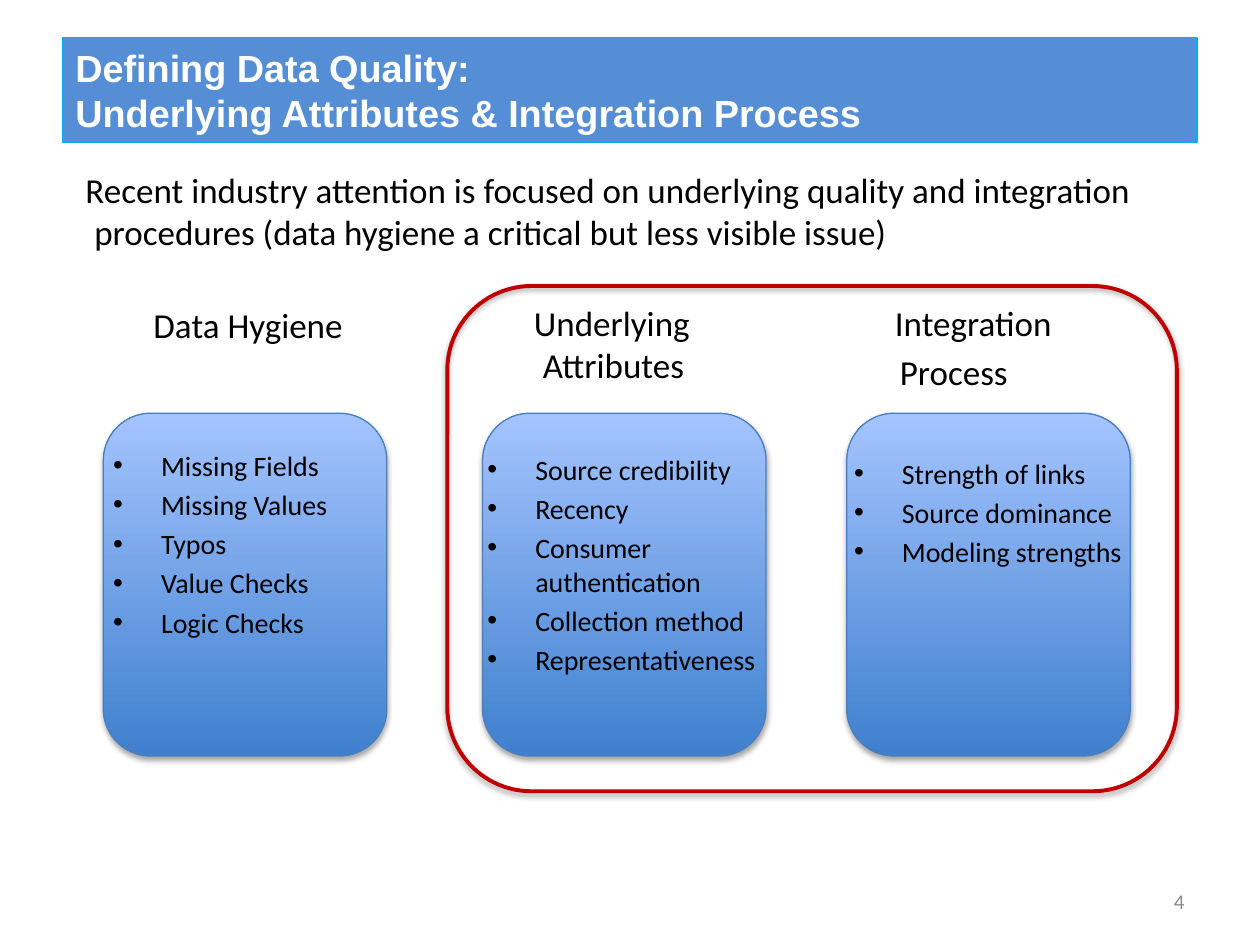
from lxml.etree import SubElement
from pptx import Presentation
from pptx.dml.color import RGBColor
from pptx.enum.shapes import MSO_SHAPE
from pptx.enum.text import MSO_ANCHOR, PP_ALIGN
from pptx.oxml.ns import qn
from pptx.util import Inches, Pt

COLORS = {
    "title_fill": "558ED5", "title_line": "00B0F0", "title_text": "FFFFFF",
    "text": "000000", "number": "8C8C8C", "shadow": "000000",
    "card_bottom": "3F80CE", "card_top": "A4C4FF", "card_line": "4B7EBC",
    "frame": "C00000",
}
TITLE = ["Defining Data Quality:", "Underlying Attributes & Integration Process"]
INTRO = ("Recent industry attention is focused on underlying quality and integration "
         "procedures (data hygiene a critical but less visible issue)")
COLUMNS = [
    {"heading": ["Data Hygiene"], "heading_at": (0.81, 2.36),
     "align": PP_ALIGN.LEFT, "card_left": 0.82, "list_at": (0.8, 3.51, 2.32),
     "items": ["Missing Fields", "Missing Values", "Typos", "Value Checks", "Logic Checks"]},
    {"heading": ["Underlying Attributes"], "heading_at": (3.83, 2.34),
     "align": PP_ALIGN.LEFT, "card_left": 3.83, "list_at": (3.77, 3.54, 2.48),
     "items": ["Source credibility", "Recency", "Consumer authentication",
               "Collection method", "Representativeness"]},
    {"heading": ["Integration", "Process"], "heading_at": (6.52, 2.34),
     "align": PP_ALIGN.CENTER, "card_left": 6.72, "list_at": (6.68, 3.57, 2.48),
     "items": ["Strength of links", "Source dominance", "Modeling strengths"]},
]
HANGING = 0.38
FIRST_LINE = -0.07


def color(name):
    return RGBColor.from_string(COLORS[name])


def style_font(font, **values):
    values = {"name": "Calibri", "size": Pt(20), **values}
    font.color.rgb = color(values.pop("color", "text"))
    for attribute, value in values.items():
        setattr(font, attribute, value)


def add_text(slide, box, lines, size=20, align=PP_ALIGN.LEFT, bullet=False):
    frame = slide.shapes.add_textbox(*map(Inches, box)).text_frame
    frame.word_wrap = True
    for index, line in enumerate(lines):
        paragraph = frame.paragraphs[0] if index == 0 else frame.add_paragraph()
        paragraph.text = line
        paragraph.alignment = align
        if index:
            paragraph.space_before = Pt(size * 0.2)
        indent = FIRST_LINE if index == 0 and not bullet else -HANGING
        properties = paragraph._p.get_or_add_pPr()
        properties.set("marL", str(Inches(HANGING)))
        properties.set("indent", str(Inches(indent)))
        if bullet:
            SubElement(properties, qn("a:buFont"), typeface="Arial")
            SubElement(properties, qn("a:buChar"), char="•")
        style_font(paragraph.font, size=Pt(size))


def add_outlined(slide, kind, box, line, width):
    shape = slide.shapes.add_shape(kind, *map(Inches, box))
    shape.shadow.inherit = False
    shape.line.color.rgb = color(line)
    shape.line.width = Pt(width)
    return shape


def add_shadow(shape):
    effects = shape._element.spPr.find(qn("a:effectLst"))
    shadow = SubElement(effects, qn("a:outerShdw"), blurRad=str(Pt(3.1)),
                        dist=str(Pt(1.8)), dir="5400000", rotWithShape="0")
    tint = SubElement(shadow, qn("a:srgbClr"), val=COLORS["shadow"])
    SubElement(tint, qn("a:alpha"), val="35000")


def add_title(slide):
    shape = add_outlined(slide, MSO_SHAPE.RECTANGLE, (0.5, 0.3, 9, 0.83), "title_line", 0.75)
    shape.fill.solid()
    shape.fill.fore_color.rgb = color("title_fill")
    shape.text_frame.vertical_anchor = MSO_ANCHOR.MIDDLE
    paragraph = shape.text_frame.paragraphs[0]
    paragraph.alignment = PP_ALIGN.LEFT
    for index, line in enumerate(TITLE):
        if index:
            paragraph.add_line_break()
        run = paragraph.add_run()
        run.text = line
        style_font(run.font, name="Arial", size=Pt(21.6), bold=True, color="title_text")


def add_card(slide, left):
    card = add_outlined(slide, MSO_SHAPE.ROUNDED_RECTANGLE, (left, 3.28, 2.25, 2.72),
                        "card_line", 0.75)
    card.fill.gradient()
    card.fill.gradient_angle = 90
    for stop, name, position in zip(card.fill.gradient_stops, ("card_bottom", "card_top"), (0, 1)):
        stop.color.rgb = color(name)
        stop.position = position
    add_shadow(card)


def add_number(slide):
    frame = slide.shapes.add_textbox(*map(Inches, (7.17, 6.95, 2.33, 0.4))).text_frame
    frame.word_wrap = True
    frame.vertical_anchor = MSO_ANCHOR.MIDDLE
    paragraph = frame.paragraphs[0]
    paragraph.text = "4"
    paragraph.alignment = PP_ALIGN.RIGHT
    style_font(paragraph.font, size=Pt(12), color="number")


def main():
    presentation = Presentation()
    presentation.slide_width, presentation.slide_height = Inches(10), Inches(7.5)
    slide = presentation.slides.add_slide(presentation.slide_layouts[6])
    add_title(slide)
    add_number(slide)
    add_text(slide, (0.27, 1.29, 9.23, 0.69), [INTRO])
    for column in COLUMNS:
        add_text(slide, (*column["heading_at"], 2.1, 0.39), column["heading"],
                 align=column["align"])
        add_card(slide, column["card_left"])
        add_text(slide, (*column["list_at"], 1.88), column["items"], size=16, bullet=True)
    frame = add_outlined(slide, MSO_SHAPE.ROUNDED_RECTANGLE, (3.55, 2.27, 5.79, 4.01),
                         "frame", 2.25)
    frame.fill.background()
    add_shadow(frame)
    presentation.save("out.pptx")


if __name__ == "__main__":
    main()
